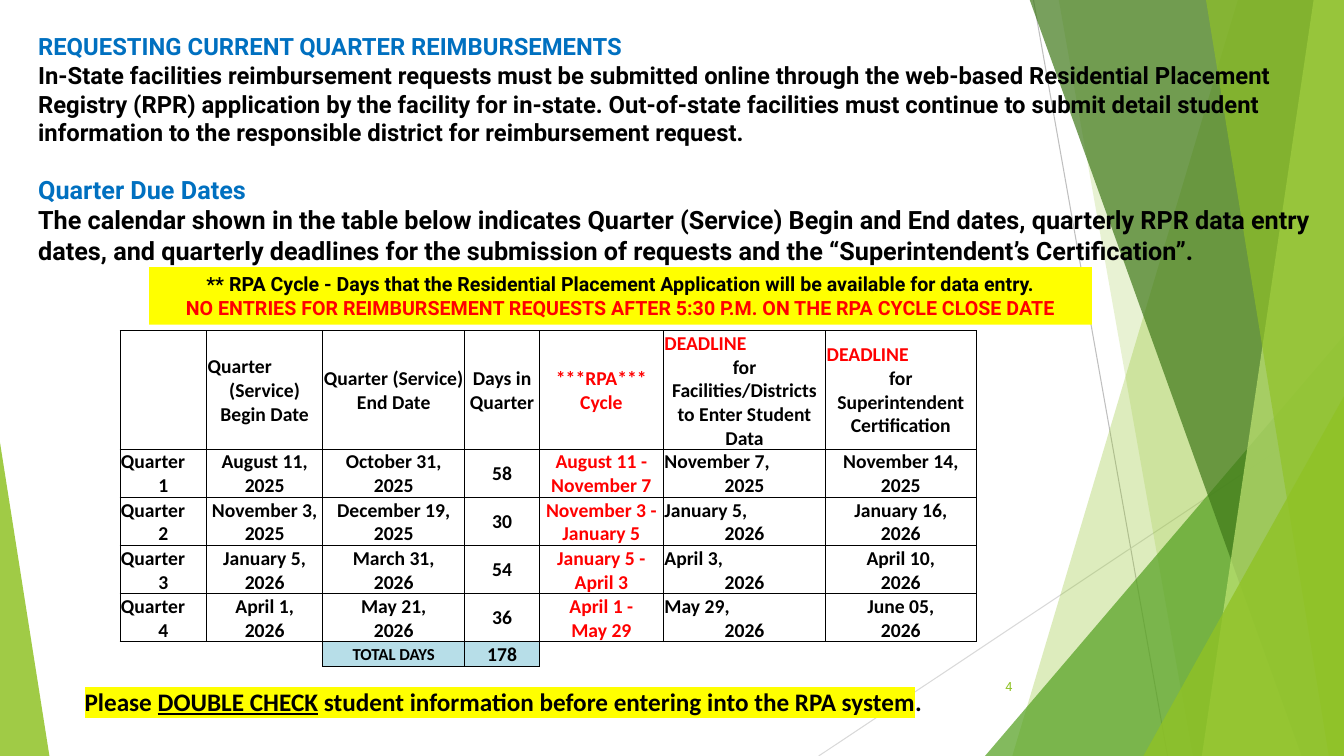
from lxml import etree
from pptx import Presentation
from pptx.dml.color import RGBColor
from pptx.enum.shapes import MSO_CONNECTOR, MSO_SHAPE
from pptx.enum.text import MSO_ANCHOR, PP_ALIGN
from pptx.oxml.ns import qn
from pptx.util import Inches, Pt

BLACK = RGBColor(0x00, 0x00, 0x00)
WHITE = RGBColor(0xFF, 0xFF, 0xFF)
RED = RGBColor(0xFF, 0x00, 0x00)
BLUE = RGBColor(0x00, 0x70, 0xC0)
YELLOW = RGBColor(0xFF, 0xFF, 0x00)
TOTAL_BLUE = RGBColor(0xB7, 0xDE, 0xE8)
LIME = RGBColor(0x90, 0xC2, 0x26)
PALE_LIME = RGBColor(0xC0, 0xE4, 0x74)
GREEN = RGBColor(0x54, 0xA0, 0x21)
DARK_GREEN = RGBColor(0x3F, 0x78, 0x19)
GREY = RGBColor(0xBF, 0xBF, 0xBF)
PALE_GREY = RGBColor(0xD9, 0xD9, 0xD9)

WIDTH, HEIGHT, BLEED = 13.33, 7.5, -0.01

THIN_LINES = [((10.25, 0), (11.58, HEIGHT), GREY), ((WIDTH, 4.03), (8.12, HEIGHT), PALE_GREY)]
# Bands run to the right slide edge: (top x, bottom x, colour, opacity %)
# Triangles: (left, top, width, apex position, colour, opacity %)
BACK_BANDS = [(12.28, 10.04, LIME, 30), (10.5, 11.83, LIME, 20)]
MIDDLE_TRIANGLE = (9.77, 3.33, 3.56, 1, GREEN, 72)
FRONT_BANDS = [
    (10.21, 12.91, DARK_GREEN, 70),
    (13.03, 11.92, PALE_LIME, 70),
    (11.96, 13.18, LIME, 65),
]
FRONT_TRIANGLES = [(11.34, 3.93, 1.99, 1, LIME, 80), (0, 4.39, 0.49, 0, LIME, 85)]

# (text, size, colour, space before)
INTRO = [
    ("REQUESTING CURRENT QUARTER REIMBURSEMENTS", 17, BLUE, 0),
    ("In-State facilities reimbursement requests must be submitted online through the web-based "
     "Residential Placement Registry (RPR) application by the facility for in-state. Out-of-state "
     "facilities must continue to submit detail student information to the responsible district "
     "for reimbursement request.", 17, BLACK, 0),
    ("Quarter Due Dates", 18, BLUE, 20),
    ("The calendar shown in the table below indicates Quarter (Service) Begin and End dates, "
     "quarterly RPR data entry dates, and quarterly deadlines for the submission of requests and "
     "the “Superintendent’s Certification”.", 18, BLACK, 0),
]
CYCLE_NOTE = [
    ("** RPA Cycle - Days that the Residential Placement Application will be available "
     "for data entry.", 14, BLACK, 0),
    ("NO ENTRIES FOR REIMBURSEMENT REQUESTS AFTER 5:30 P.M. ON THE RPA CYCLE CLOSE DATE",
     14, RED, 0),
]
# (text, underlined, highlighted)
REMINDER = [
    ("Please ", False, True),
    ("DOUBLE CHECK", True, True),
    (" student information before entering into the RPA system", False, True),
    (".", False, False),
]

COLUMN_WIDTHS = [0.86, 1.15, 1.41, 0.74, 1.23, 1.61, 1.49]
ROW_HEIGHTS = [1.13, 0.45, 0.45, 0.45, 0.45, 0.23]
CALENDAR = [
    ["", "Quarter\n(Service)\nBegin Date", "Quarter (Service)\nEnd Date", "Days in\nQuarter",
     "***RPA***\nCycle", "DEADLINE\nfor\nFacilities/Districts\nto Enter Student\nData",
     "DEADLINE\nfor\nSuperintendent\nCertification"],
    ["Quarter\n1", "August 11,\n2025", "October 31,\n2025", "58",
     "August 11 -\nNovember 7", "November 7,\n2025", "November 14,\n2025"],
    ["Quarter\n2", "November 3,\n2025", "December 19,\n2025", "30",
     "November 3 -\nJanuary 5", "January 5,\n2026", "January 16,\n2026"],
    ["Quarter\n3", "January 5,\n2026", "March 31,\n2026", "54",
     "January 5 -\nApril 3", "April 3,\n2026", "April 10,\n2026"],
    ["Quarter\n4", "April 1,\n2026", "May 21,\n2026", "36",
     "April 1 -\nMay 29", "May 29,\n2026", "June 05,\n2026"],
    ["", "", "TOTAL DAYS", "178", "", "", ""],
]
TOTAL_ROW = len(CALENDAR) - 1
CYCLE_COLUMN = 4
LEFT_LEAD_COLUMNS = {0, 5}
LEFT_LEAD_HEADERS = {1, 6}
NO_STYLE = "{2D5ABB26-0587-4C30-8999-92F81FD0307C}"


def set_font(font, size, color, name="Roboto", bold=True):
    font.name, font.size, font.bold = name, Pt(size), bold
    font.color.rgb = color


def paint(shape, color, opacity=100):
    shape.shadow.inherit = False
    shape.line.fill.background()
    shape.fill.solid()
    shape.fill.fore_color.rgb = color
    if opacity < 100:
        srgb = shape.fill._xPr.find(qn("a:solidFill"))[0]
        etree.SubElement(srgb, qn("a:alpha"), val=str(opacity * 1000))


def add_thin_line(slide, start, end, color):
    line = slide.shapes.add_connector(MSO_CONNECTOR.STRAIGHT, *map(Inches, start + end))
    line.line.color.rgb = color
    line.line.width = Pt(0.75)
    etree.SubElement(line._element.spPr, qn("a:effectLst"))


def add_band(slide, top_x, bottom_x, color, opacity):
    outline = slide.shapes.build_freeform(Inches(top_x), Inches(BLEED))
    corners = [(WIDTH, BLEED), (WIDTH, HEIGHT), (bottom_x, HEIGHT)]
    outline.add_line_segments([(Inches(x), Inches(y)) for x, y in corners], close=True)
    paint(outline.convert_to_shape(), color, opacity)


def add_triangle(slide, left, top, width, apex, color, opacity):
    triangle = slide.shapes.add_shape(
        MSO_SHAPE.ISOSCELES_TRIANGLE, *map(Inches, (left, top, width, HEIGHT - top)))
    triangle.adjustments[0] = apex
    paint(triangle, color, opacity)


def add_text_box(slide, left, top, width, height, anchor=MSO_ANCHOR.MIDDLE):
    frame = slide.shapes.add_textbox(*map(Inches, (left, top, width, height))).text_frame
    frame.word_wrap = True
    frame.vertical_anchor = anchor
    return frame


def write_paragraphs(frame, paragraphs, align):
    for i, (text, size, color, before) in enumerate(paragraphs):
        paragraph = frame.add_paragraph() if i else frame.paragraphs[0]
        paragraph.text = text
        paragraph.alignment = align
        paragraph.space_before = Pt(before)
        set_font(paragraph.font, size, color)


def add_border(cell, edge, points):
    line = etree.SubElement(cell._tc.get_or_add_tcPr(), qn(f"a:ln{edge}"), w=str(Pt(points)))
    fill = etree.SubElement(line, qn("a:solidFill"))
    etree.SubElement(fill, qn("a:srgbClr"), val=str(BLACK))


def fill_cell(cell, text, row, column):
    cell.margin_left = cell.margin_right = cell.margin_top = Inches(0.01)
    cell.margin_bottom = 0
    cell.vertical_anchor = MSO_ANCHOR.MIDDLE
    for edge in "T" if row == TOTAL_ROW and not text else "LRTB":
        add_border(cell, edge, 1 if row == 0 and edge == "T" else 0.5)
    if row == TOTAL_ROW and text:
        cell.fill.solid()
        cell.fill.fore_color.rgb = TOTAL_BLUE
    elif 0 < row < TOTAL_ROW - 1:
        cell.fill.solid()
        cell.fill.fore_color.rgb = WHITE
    else:
        cell.fill.background()

    left_lead = column in LEFT_LEAD_COLUMNS or (row == 0 and column in LEFT_LEAD_HEADERS)
    size = 12 if row == TOTAL_ROW and column != 3 else 14
    for i, line in enumerate(text.split("\n")):
        paragraph = cell.text_frame.add_paragraph() if i else cell.text_frame.paragraphs[0]
        paragraph.text = line
        paragraph.alignment = PP_ALIGN.LEFT if left_lead and i == 0 else PP_ALIGN.CENTER
        red = column == CYCLE_COLUMN or line == "DEADLINE"
        set_font(paragraph.font, size, RED if red else BLACK, "Calibri")


def add_calendar(slide):
    table = slide.shapes.add_table(
        len(ROW_HEIGHTS), len(COLUMN_WIDTHS), Inches(1.19), Inches(3.28),
        Inches(sum(COLUMN_WIDTHS)), Inches(sum(ROW_HEIGHTS))).table
    table.first_row = table.horz_banding = False
    table._tbl.tblPr.find(qn("a:tableStyleId")).text = NO_STYLE
    for column, width in zip(table.columns, COLUMN_WIDTHS):
        column.width = Inches(width)
    for r, height in enumerate(ROW_HEIGHTS):
        table.rows[r].height = Inches(height)
        for c, text in enumerate(CALENDAR[r]):
            fill_cell(table.cell(r, c), text, r, c)


def add_reminder(slide):
    paragraph = add_text_box(slide, 0.74, 6.75, 9.72, 0.41).paragraphs[0]
    set_font(paragraph.font, 18, BLACK, "Calibri")
    for text, underlined, highlighted in REMINDER:
        run = paragraph.add_run()
        run.text = text
        run.font.underline = underlined
        if highlighted:
            highlight = etree.SubElement(run._r.get_or_add_rPr(), qn("a:highlight"))
            etree.SubElement(highlight, qn("a:srgbClr"), val=str(YELLOW))


def main():
    deck = Presentation()
    deck.slide_width, deck.slide_height = Inches(WIDTH), Inches(HEIGHT)
    slide = deck.slides.add_slide(deck.slide_layouts[6])

    for line in THIN_LINES:
        add_thin_line(slide, *line)
    for band in BACK_BANDS:
        add_band(slide, *band)
    add_triangle(slide, *MIDDLE_TRIANGLE)
    for band in FRONT_BANDS:
        add_band(slide, *band)
    for triangle in FRONT_TRIANGLES:
        add_triangle(slide, *triangle)

    add_reminder(slide)
    page_number = add_text_box(slide, 9.39, 6.61, 0.75, 0.4).paragraphs[0]
    page_number.text = "4"
    page_number.alignment = PP_ALIGN.RIGHT
    set_font(page_number.font, 9, LIME, bold=False)

    intro = add_text_box(slide, 0.28, 0.27, 13.17, 3.65, MSO_ANCHOR.TOP)
    write_paragraphs(intro, INTRO, PP_ALIGN.LEFT)
    banner = slide.shapes.add_shape(
        MSO_SHAPE.RECTANGLE, *map(Inches, (1.48, 2.65, 9.35, 0.57)))
    paint(banner, YELLOW)
    banner.text_frame.word_wrap = True
    write_paragraphs(banner.text_frame, CYCLE_NOTE, PP_ALIGN.CENTER)
    add_calendar(slide)
    deck.save("out.pptx")


if __name__ == "__main__":
    main()
